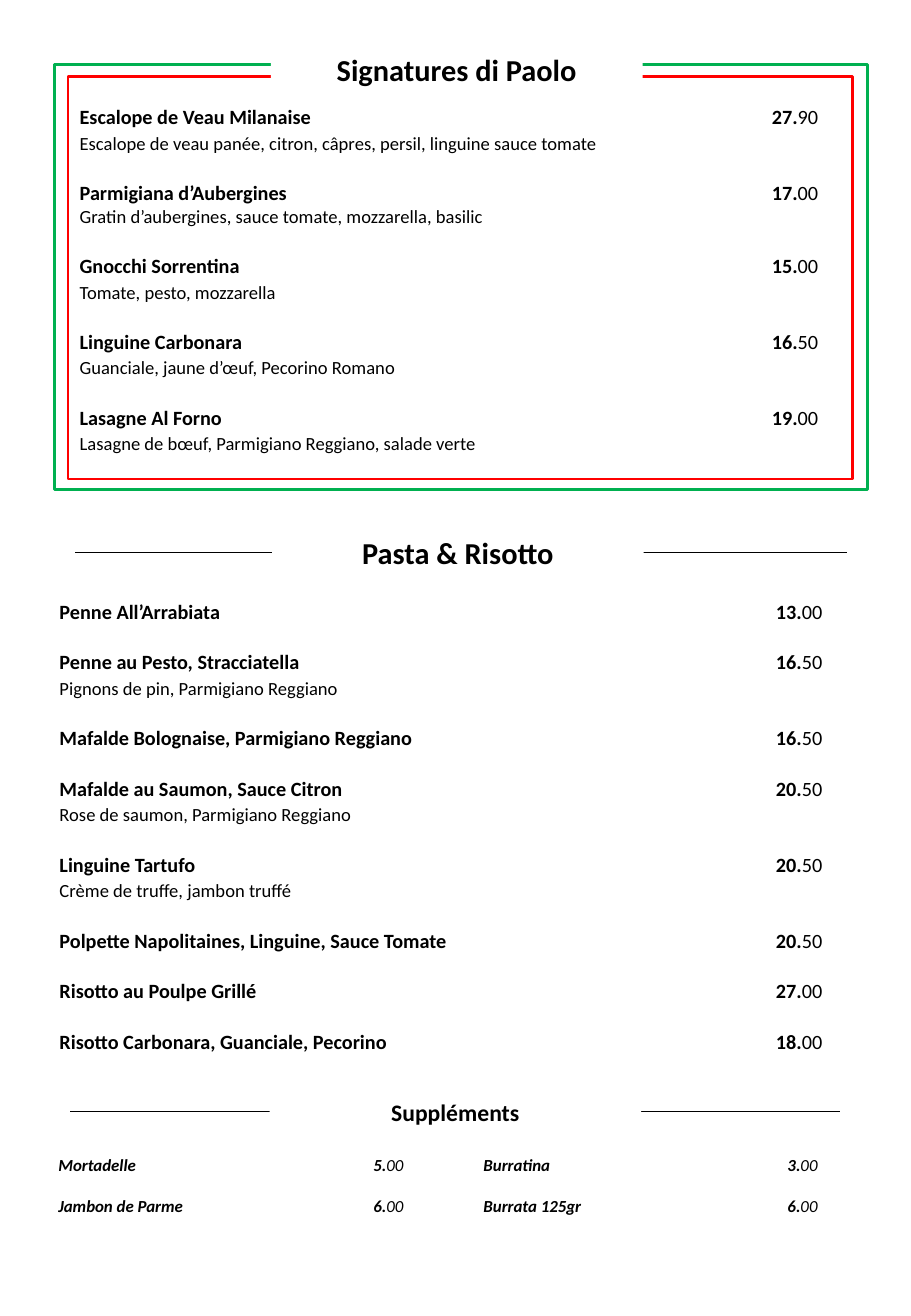
from dataclasses import dataclass

from lxml import etree
from pptx import Presentation
from pptx.dml.color import RGBColor
from pptx.enum.shapes import MSO_CONNECTOR, MSO_SHAPE
from pptx.enum.text import MSO_ANCHOR, PP_ALIGN
from pptx.oxml.ns import qn
from pptx.util import Pt

RECTANGLE = MSO_SHAPE.RECTANGLE
STRAIGHT = MSO_CONNECTOR.STRAIGHT
MIDDLE = MSO_ANCHOR.MIDDLE
CENTER = PP_ALIGN.CENTER

BLACK = RGBColor(0x00, 0x00, 0x00)
WHITE = RGBColor(0xFF, 0xFF, 0xFF)
RED = RGBColor(0xFF, 0x00, 0x00)
GREEN = RGBColor(0x00, 0xB0, 0x50)

FONT = "Calibri"
LINE_HEIGHT = 15
HEADING_WIDTH = 220.3


@dataclass
class Dish:
    name: str
    price: str
    details: str = ""
    tight: bool = False  # details at natural line height


SIGNATURES = [
    Dish("Escalope de Veau Milanaise", "27.90",
         "Escalope de veau panée, citron, câpres, persil, linguine sauce tomate"),
    Dish("Parmigiana d’Aubergines", "17.00",
         "Gratin d’aubergines, sauce tomate, mozzarella, basilic", tight=True),
    Dish("Gnocchi Sorrentina", "15.00", "Tomate, pesto, mozzarella"),
    Dish("Linguine Carbonara", "16.50", "Guanciale, jaune d’œuf, Pecorino Romano"),
    Dish("Lasagne Al Forno", "19.00",
         "Lasagne de bœuf, Parmigiano Reggiano, salade verte"),
]
PASTA_RISOTTO = [
    Dish("Penne All’Arrabiata", "13.00"),
    Dish("Penne au Pesto, Stracciatella", "16.50", "Pignons de pin, Parmigiano Reggiano"),
    Dish("Mafalde Bolognaise, Parmigiano Reggiano", "16.50"),
    Dish("Mafalde au Saumon, Sauce Citron", "20.50", "Rose de saumon, Parmigiano Reggiano"),
    Dish("Linguine Tartufo", "20.50", "Crème de truffe, jambon truffé"),
    Dish("Polpette Napolitaines, Linguine, Sauce Tomate", "20.50"),
    Dish("Risotto au Poulpe Grillé", "27.00"),
    Dish("Risotto Carbonara, Guanciale, Pecorino", "18.00"),
]
MEATS = [Dish("Mortadelle", "5.00"), Dish("Jambon de Parme", "6.00")]
CHEESES = [Dish("Burratina", "3.00"), Dish("Burrata 125gr", "6.00")]


def clear_margins(frame):
    frame.margin_left = frame.margin_right = 0
    frame.margin_top = frame.margin_bottom = 0


def set_font(paragraph, size):
    font = paragraph.font
    font.name = FONT
    font.size = Pt(size)
    font.color.rgb = BLACK


def add_border(slide, left, top, width, height, color):
    border = slide.shapes.add_shape(RECTANGLE, Pt(left), Pt(top), Pt(width), Pt(height))
    border.shadow.inherit = False
    border.fill.background()
    border.line.color.rgb = color
    border.line.width = Pt(1.5)


def add_rule(slide, left, right, y):
    rule = slide.shapes.add_connector(STRAIGHT, Pt(left), Pt(y), Pt(right), Pt(y))
    rule.line.color.rgb = BLACK
    rule.line.width = Pt(0.5)
    etree.SubElement(rule._element.spPr, qn("a:effectLst"))


def add_heading(slide, title, left, top, height, size):
    """Place a centred title on a white box that interrupts the line behind it."""
    heading = slide.shapes.add_shape(
        RECTANGLE, Pt(left), Pt(top), Pt(HEADING_WIDTH), Pt(height))
    heading.shadow.inherit = False
    heading.fill.solid()
    heading.fill.fore_color.rgb = WHITE
    heading.line.fill.background()
    frame = heading.text_frame
    clear_margins(frame)
    frame.vertical_anchor = MIDDLE
    paragraph = frame.paragraphs[0]
    paragraph.text = title
    paragraph.alignment = CENTER
    set_font(paragraph, size)
    paragraph.font.bold = True


def add_price_tab(paragraph, position):
    tabs = etree.SubElement(paragraph._p.get_or_add_pPr(), qn("a:tabLst"))
    etree.SubElement(tabs, qn("a:tab"), pos=str(Pt(position)), algn="r")


def add_list_box(slide, left, top, width, height):
    frame = slide.shapes.add_textbox(
        Pt(left), Pt(top), Pt(width), Pt(height)).text_frame
    frame.word_wrap = True
    clear_margins(frame)
    return frame


def write_dish(paragraph, dish, price_tab, size):
    """Write the name and whole euros in bold, the cents in regular weight."""
    add_price_tab(paragraph, price_tab)
    set_font(paragraph, size)
    euros, cents = dish.price.split(".")
    for text, bold in ((f"{dish.name}\t{euros}.", True), (cents, False)):
        run = paragraph.add_run()
        run.text = text
        run.font.bold = bold


def add_dishes(slide, dishes, left, top, width, height, price_tab):
    frame = add_list_box(slide, left, top, width, height)
    for index, dish in enumerate(dishes):
        title = frame.add_paragraph() if index else frame.paragraphs[0]
        write_dish(title, dish, price_tab, 12)
        title.line_spacing = Pt(LINE_HEIGHT)
        if index:
            title.space_before = Pt(LINE_HEIGHT)
        if dish.details:
            details = frame.add_paragraph()
            details.text = dish.details
            set_font(details, 11)
            if not dish.tight:
                details.line_spacing = Pt(LINE_HEIGHT)


def add_extras(slide, extras, left, price_tab):
    frame = add_list_box(slide, left, 684, 227.5, 36)
    for index, extra in enumerate(extras):
        paragraph = frame.add_paragraph() if index else frame.paragraphs[0]
        write_dish(paragraph, extra, price_tab, 10)
        paragraph.font.italic = True
        if index:
            paragraph.space_before = Pt(12.2)


def main():
    menu = Presentation()
    menu.slide_width = Pt(540)
    menu.slide_height = Pt(779.76)
    slide = menu.slides.add_slide(menu.slide_layouts[6])

    add_rule(slide, 44.6, 501.8, 327.6)
    add_heading(slide, "Pasta & Risotto", 161.3, 316.8, 21.6, 18)
    add_dishes(slide, PASTA_RISOTTO, 35.3, 354.2, 479.5, 286.6, 452.2)

    add_border(slide, 40.3, 45.4, 465.1, 238.3, RED)
    add_border(slide, 32.4, 38.2, 481.7, 252, GREEN)
    add_dishes(slide, SIGNATURES, 47.2, 61.2, 452.2, 210.2, 437.8)
    add_heading(slide, "Signatures di Paolo", 160.6, 30.2, 21.6, 18)

    add_rule(slide, 41.8, 498.2, 658.8)
    add_heading(slide, "Suppléments", 159.8, 650.2, 17.3, 14)
    add_extras(slide, MEATS, 34.6, 204.5)
    add_extras(slide, CHEESES, 286.6, 198)

    menu.save("out.pptx")


if __name__ == "__main__":
    main()
